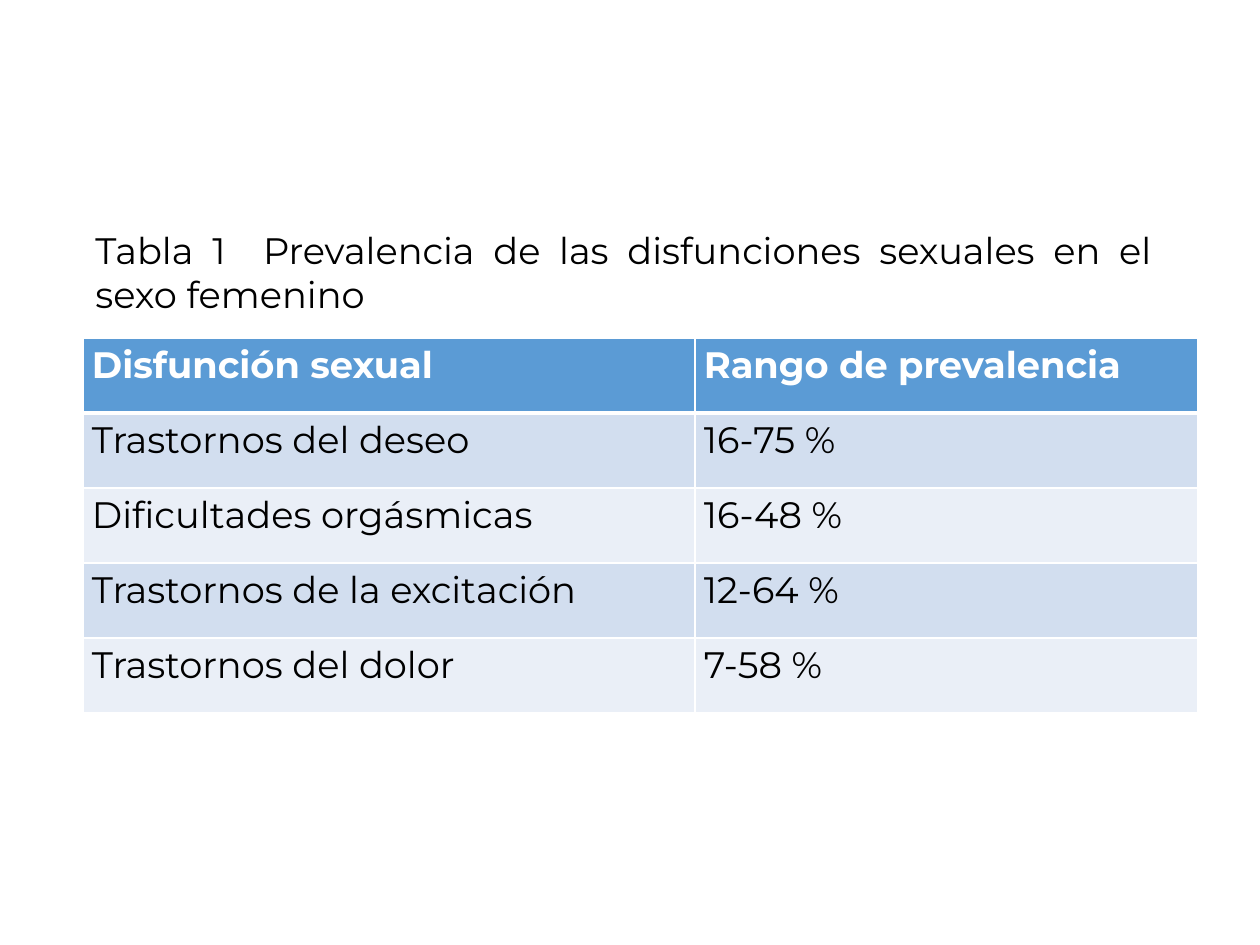
from lxml import etree
from pptx import Presentation
from pptx.dml.color import RGBColor
from pptx.enum.text import PP_ALIGN
from pptx.oxml.ns import qn
from pptx.util import Pt

JUSTIFY = PP_ALIGN.JUSTIFY
EMU_PER_PX = 914400 / 126
FONT, FONT_SIZE = "Montserrat", 21
WHITE, BLACK, HEADER_BLUE = "FFFFFF", "000000", "5B9BD5"
BAND_FILLS = ("D2DEEF", "EAEFF7")

# Content
CAPTION = "Tabla 1  Prevalencia de las disfunciones sexuales en el sexo femenino"
ROWS = [
    ("Disfunción sexual", "Rango de prevalencia"),
    ("Trastornos del deseo", "16-75 %"),
    ("Dificultades orgásmicas", "16-48 %"),
    ("Trastornos de la excitación", "12-64 %"),
    ("Trastornos del dolor", "7-58 %"),
]

# Layout in px
SLIDE_SIZE = (1260, 945)
CAPTION_BOX = (83, 222, 1081, 102)
TABLE_LEFT, TABLE_TOP = 83, 338
COLUMN_WIDTHS = (612, 503)
ROW_HEIGHT = 75
CELL_MARGIN_X, CELL_MARGIN_Y = 9, 5


def px(value):
    return round(value * EMU_PER_PX)


def color(hex_string):
    return RGBColor.from_string(hex_string)


def add_run(paragraph, text, hex_string, bold=False):
    run = paragraph.add_run()
    run.text = text
    run.font.name = FONT
    run.font.size = Pt(FONT_SIZE)
    run.font.bold = bold
    run.font.color.rgb = color(hex_string)


def add_border(cell, side, width):
    properties = cell._tc.get_or_add_tcPr()
    line = etree.SubElement(properties, qn(f"a:ln{side}"), w=str(Pt(width)))
    fill = etree.SubElement(line, qn("a:solidFill"))
    etree.SubElement(fill, qn("a:srgbClr"), val=WHITE)


def format_cell(cell, text, row_index):
    is_header = row_index == 0
    cell.margin_left = cell.margin_right = px(CELL_MARGIN_X)
    cell.margin_top = cell.margin_bottom = px(CELL_MARGIN_Y)
    # The rule between the header and the body is thicker
    top = 3 if row_index == 1 else 1
    bottom = 3 if is_header else 1
    for side, width in (("L", 1), ("R", 1), ("T", top), ("B", bottom)):
        add_border(cell, side, width)
    cell.fill.solid()
    fill = HEADER_BLUE if is_header else BAND_FILLS[(row_index - 1) % 2]
    cell.fill.fore_color.rgb = color(fill)
    add_run(cell.text_frame.paragraphs[0], text,
            WHITE if is_header else BLACK, is_header)


def add_prevalence_table(slide):
    table = slide.shapes.add_table(
        len(ROWS), len(COLUMN_WIDTHS), px(TABLE_LEFT), px(TABLE_TOP),
        px(sum(COLUMN_WIDTHS)), px(ROW_HEIGHT * len(ROWS))).table
    for column, width in zip(table.columns, COLUMN_WIDTHS):
        column.width = px(width)
    for row_index, texts in enumerate(ROWS):
        table.rows[row_index].height = px(ROW_HEIGHT)
        for column_index, text in enumerate(texts):
            format_cell(table.cell(row_index, column_index), text, row_index)


def add_caption(slide):
    text_frame = slide.shapes.add_textbox(*map(px, CAPTION_BOX)).text_frame
    text_frame.word_wrap = True
    paragraph = text_frame.paragraphs[0]
    paragraph.alignment = JUSTIFY
    add_run(paragraph, CAPTION, BLACK)


def main():
    presentation = Presentation()
    presentation.slide_width, presentation.slide_height = map(px, SLIDE_SIZE)
    slide = presentation.slides.add_slide(presentation.slide_layouts[6])
    add_prevalence_table(slide)
    add_caption(slide)
    presentation.save("out.pptx")


if __name__ == "__main__":
    main()
